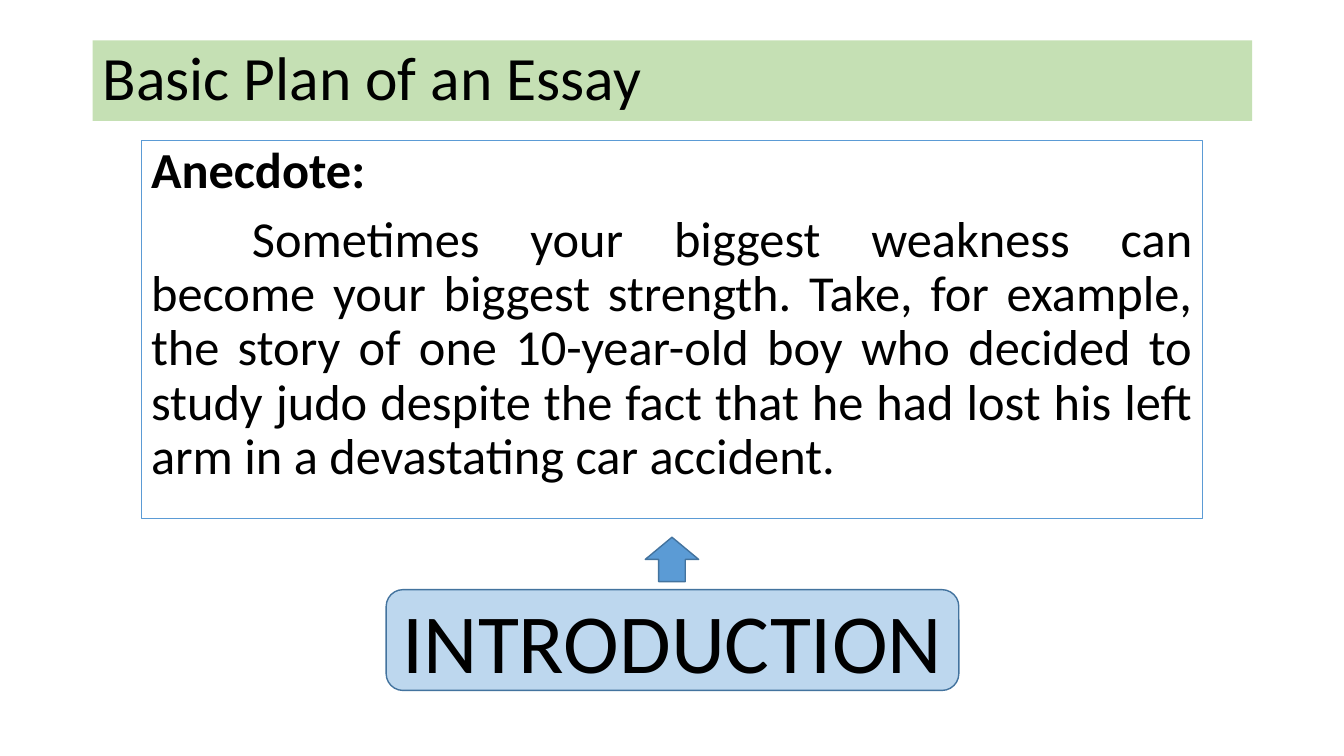
from pptx import Presentation
from pptx.dml.color import RGBColor
from pptx.enum.shapes import MSO_SHAPE
from pptx.enum.text import MSO_ANCHOR, PP_ALIGN
from pptx.util import Emu, Pt

PX = 9144  # EMU per px, 100 px to the inch
COLORS = {
    "text": "000000",
    "title_band": "C5E0B4",
    "frame": "5B9BD5",
    "arrow": "5B9BD5",
    "label": "BDD7EE",
    "outline": "43739E",
}


class EssaySlide:
    """Holds the style and the current slide."""

    def __init__(self, presentation, font="Calibri"):
        self.slide = presentation.slides.add_slide(presentation.slide_layouts[6])
        self.font = font

    def add_box(self, kind, left, top, width, height, fill=None, line=None,
                line_width=1, anchor=MSO_ANCHOR.MIDDLE):
        shape = self.slide.shapes.add_shape(
            kind, *(Emu(value * PX) for value in (left, top, width, height)))
        shape.shadow.inherit = False
        if fill:
            shape.fill.solid()
            shape.fill.fore_color.rgb = RGBColor.from_string(COLORS[fill])
        else:
            shape.fill.background()
        if line:
            shape.line.color.rgb = RGBColor.from_string(COLORS[line])
            shape.line.width = Pt(line_width)
        else:
            shape.line.fill.background()
        shape.text_frame.word_wrap = True
        shape.text_frame.vertical_anchor = anchor
        return shape

    def add_text(self, shape, text, size, align=PP_ALIGN.LEFT, bold=False,
                 spacing=None, before=0, indent=0):
        frame = shape.text_frame
        paragraph = frame.paragraphs[0]
        if paragraph.runs:
            paragraph = frame.add_paragraph()
        paragraph.alignment = align
        paragraph.line_spacing = spacing
        paragraph.space_before = Pt(before)
        if indent:
            properties = paragraph._p.get_or_add_pPr()
            properties.set("marL", "0")
            properties.set("indent", str(indent * PX))
        run = paragraph.add_run()
        run.text = text
        run.font.name = self.font
        run.font.size = Pt(size)
        run.font.bold = bold
        run.font.color.rgb = RGBColor.from_string(COLORS["text"])


def main():
    presentation = Presentation()
    presentation.slide_width = Emu(1333 * PX)
    presentation.slide_height = Emu(750 * PX)
    essay = EssaySlide(presentation)

    # Title band
    title = essay.add_box(MSO_SHAPE.RECTANGLE, 92, 40, 1150, 80, fill="title_band")
    essay.add_text(title, "Basic Plan of an Essay", 44, spacing=0.9)

    # Anecdote frame
    anecdote = essay.add_box(MSO_SHAPE.RECTANGLE, 140, 139, 1053, 375, line="frame",
                             line_width=0.75, anchor=MSO_ANCHOR.TOP)
    body_style = {"size": 36, "align": PP_ALIGN.JUSTIFY, "spacing": 0.9, "before": 10}
    essay.add_text(anecdote, "Anecdote:", bold=True, **body_style)
    essay.add_text(
        anecdote,
        "Sometimes your biggest weakness can become your biggest strength. "
        "Take, for example, the story of one 10-year-old boy who decided to "
        "study judo despite the fact that he had lost his left arm in a "
        "devastating car accident.",
        indent=100, **body_style)

    # Introduction label and the arrow to the anecdote
    label = essay.add_box(MSO_SHAPE.ROUNDED_RECTANGLE, 383, 585, 568, 100,
                          fill="label", line="outline")
    essay.add_text(label, "INTRODUCTION", 60, align=PP_ALIGN.CENTER)
    essay.add_box(MSO_SHAPE.UP_ARROW, 640, 533, 53, 44, fill="arrow", line="outline")

    presentation.save("out.pptx")


if __name__ == "__main__":
    main()
